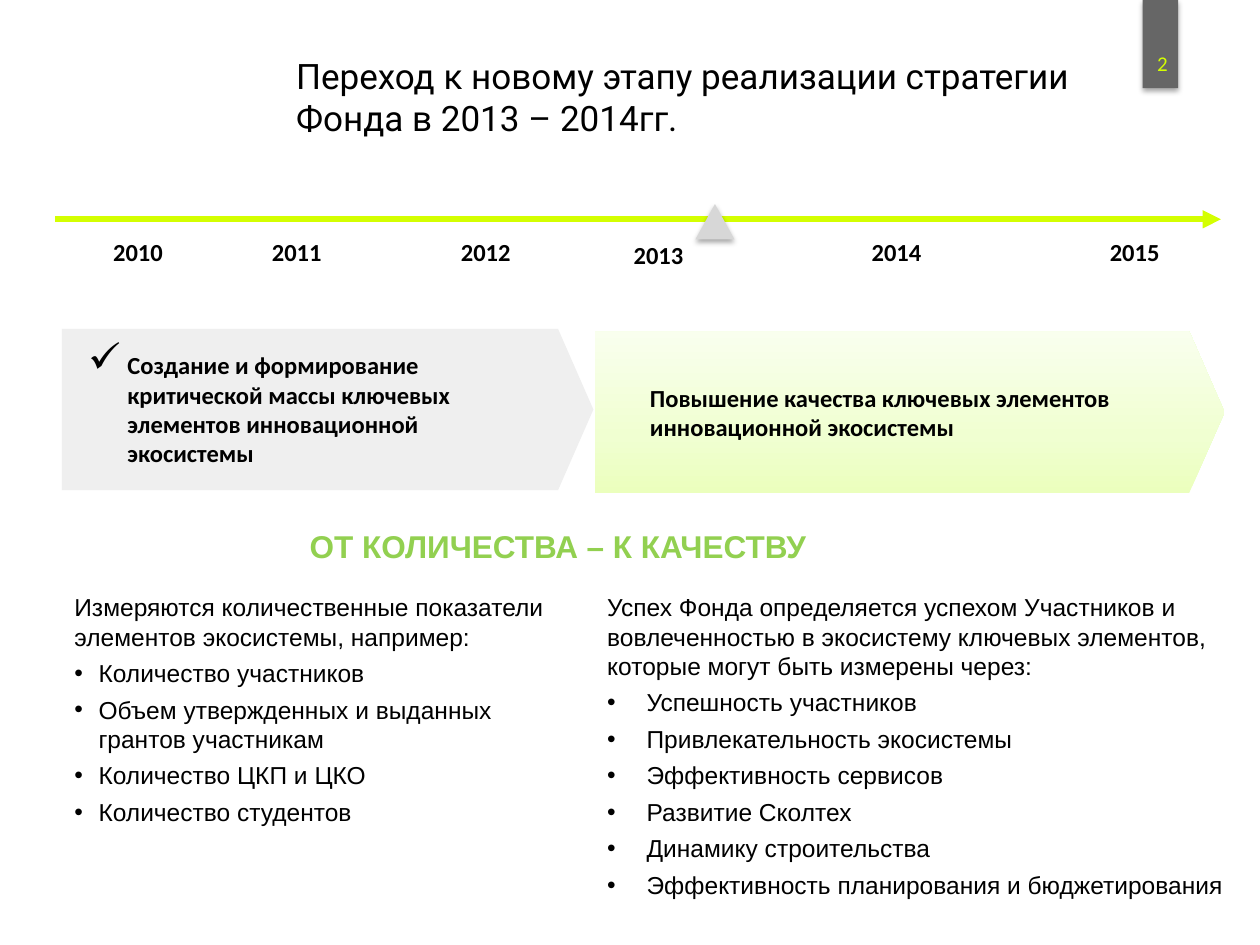
from copy import deepcopy
from lxml import etree
from pptx import Presentation
from pptx.dml.color import RGBColor
from pptx.enum.shapes import MSO_CONNECTOR, MSO_SHAPE
from pptx.enum.text import MSO_ANCHOR, MSO_AUTO_SIZE, PP_ALIGN
from pptx.oxml.ns import qn
from pptx.util import Pt

RECT, PLATE, PEAK = MSO_SHAPE.RECTANGLE, MSO_SHAPE.PENTAGON, MSO_SHAPE.ISOSCELES_TRIANGLE
LINE = MSO_CONNECTOR.STRAIGHT
TOP, MID = MSO_ANCHOR.TOP, MSO_ANCHOR.MIDDLE
LEFT, CENTER = PP_ALIGN.LEFT, PP_ALIGN.CENTER
FIXED = MSO_AUTO_SIZE.NONE

BLACK, LIME, GREY = "000000", "D4FF01", "EFEFEF"
TITLE = "Переход к новому этапу реализации стратегии Фонда в 2013 – 2014гг."
SLOGAN = "ОТ КОЛИЧЕСТВА – К КАЧЕСТВУ"
YEARS = [("2010", 57.6, 131.8), ("2011", 148.3, 131.8), ("2012", 256.3, 131.8),
         ("2013", 355, 133.4), ("2014", 491, 131.8), ("2015", 627.1, 131.8)]
PAST = "Создание и формирование критической массы ключевых элементов инновационной экосистемы"
NEXT = "Повышение качества ключевых элементов инновационной экосистемы"
FADE = [(0, "EBFFBD"), (0.35, "F0FFD1"), (1, "F9FFEE")]
LISTS = [
    ((35.3, 334.8, 290.2, 141.8), 13.8,
     "Измеряются количественные показатели элементов экосистемы, например:",
     ["Количество участников", "Объем утвержденных и выданных грантов участникам",
      "Количество ЦКП и ЦКО", "Количество студентов"]),
    ((339.8, 334.8, 373.7, 184.3), 22.5,
     "Успех Фонда определяется успехом Участников и вовлеченностью в экосистему "
     "ключевых элементов, которые могут быть измерены через:",
     ["Успешность участников", "Привлекательность экосистемы", "Эффективность сервисов",
      "Развитие Сколтех", "Динамику строительства",
      "Эффективность планирования и бюджетирования"]),
]


def color(code):
    return RGBColor.from_string(code)


def place(shape, box):
    shape.left, shape.top, shape.width, shape.height = map(Pt, box)


def bullet(par, char, indent, scale=None):
    props = par._p.get_or_add_pPr()
    props.set("marL", str(Pt(indent)))
    props.set("indent", str(-Pt(indent)))
    if scale:
        etree.SubElement(props, qn("a:buSzPct")).set("val", str(scale * 1000))
    if char:
        etree.SubElement(props, qn("a:buChar")).set("char", char)
    else:
        etree.SubElement(props, qn("a:buNone"))


def write(par, text, size, face, code=BLACK, bold=False, align=LEFT):
    par.alignment = align
    run = par.add_run()
    run.text = text
    font = run.font
    font.size, font.name, font.bold = Pt(size), face, bold
    font.color.rgb = color(code)


def setup(shape, anchor=TOP, wrap=True):
    frame = shape.text_frame
    frame.auto_size, frame.word_wrap, frame.vertical_anchor = FIXED, wrap, anchor
    return frame


def label(shapes, box, text, size, face, code=BLACK, bold=True,
          align=LEFT, anchor=TOP, wrap=True):
    frame = setup(shapes.add_textbox(*map(Pt, box)), anchor, wrap)
    write(frame.paragraphs[0], text, size, face, code, bold, align)


def block(shapes, kind, box, code):
    shape = shapes.add_shape(kind, *map(Pt, box))
    shape.shadow.inherit = False
    shape.line.fill.background()
    shape.fill.solid()
    shape.fill.fore_color.rgb = color(code)
    if kind == PLATE:
        shape.adjustments[0] = 0.219
    return shape


def shade(shape):
    effects = shape._element.spPr.find(qn("a:effectLst"))
    drop = etree.SubElement(effects, qn("a:outerShdw"), blurRad=str(Pt(3.1)),
                            dist=str(Pt(1.8)), dir="5400000", rotWithShape="0")
    tint = etree.SubElement(drop, qn("a:srgbClr"), val=BLACK)
    etree.SubElement(tint, qn("a:alpha"), val="35000")


def blend(shape, stops):
    fill = shape.fill
    fill.gradient()
    fill.gradient_angle = 90
    nodes = next(shape._element.spPr.iter(qn("a:gsLst")))
    while len(nodes) < len(stops):
        nodes.append(deepcopy(nodes[0]))
    for stop, (spot, code) in zip(fill.gradient_stops, stops):
        stop.position = spot
        stop.color.rgb = color(code)


def axis(shapes):
    line = shapes.add_connector(LINE, Pt(31.7), Pt(125.3), Pt(697.7), Pt(125.3))
    line.line.color.rgb = color(LIME)
    line.line.width = Pt(3.5)
    etree.SubElement(line.line._get_or_add_ln(), qn("a:tailEnd"), type="triangle")
    etree.SubElement(line._element.spPr, qn("a:effectLst"))
    for year, left, top in YEARS:
        label(shapes, (left, top, 43.2, 24.5), year, 14, "Calibri", wrap=False)
    shade(block(shapes, PEAK, (397.4, 116.6, 22.3, 20.2), "D7D7D7"))


def stages(shapes):
    past = shapes.add_group_shape().shapes
    block(past, PLATE, (35.3, 187.9, 303.8, 92.2), GREY)
    frame = setup(block(past, RECT, (43.2, 196.6, 275, 74.9), GREY))
    par = frame.paragraphs[0]
    bullet(par, "✓", 22.5, 170)
    write(par, PAST, 14, "Calibri", bold=True)
    later = shapes.add_group_shape().shapes
    blend(block(later, PLATE, (339.8, 189.4, 360, 92.2), FADE[0][1]), FADE)
    label(later, (364.3, 215.3, 311.8, 41), NEXT, 14, "Calibri")


def fill_list(holder, box, indent, intro, items):
    place(holder, box)
    frame = setup(holder)
    for pos, text in enumerate([intro] + items):
        par = frame.add_paragraph() if pos else frame.paragraphs[0]
        bullet(par, "•" if pos else None, indent if pos else 0)
        par.space_before, par.space_after = Pt(2 if pos else 0), Pt(2)
        write(par, text, 14, "Arial")


def main():
    """Build the slide on the move to a new stage of the strategy."""
    deck = Presentation()
    deck.slide_width, deck.slide_height = Pt(720), Pt(540)
    slide = deck.slides.add_slide(deck.slide_layouts[3])
    shapes = slide.shapes
    shade(block(shapes, RECT, (653, 0, 20.2, 50.4), "666666"))
    label(shapes, (648.7, 21.6, 31, 28.8), "2", 12, "Calibri", LIME, False, CENTER, MID)
    place(shapes.title, (162, 27.4, 491, 62.6))
    write(setup(shapes.title).paragraphs[0], TITLE, 20, "Roboto")
    axis(shapes)
    stages(shapes)
    label(shapes, (169.9, 297.4, 313.2, 37.4), SLOGAN, 18, "Arial", "92D050")
    for spot, parts in enumerate(LISTS, 1):
        fill_list(slide.placeholders[spot], *parts)
    deck.save("out.pptx")


if __name__ == "__main__":
    main()
